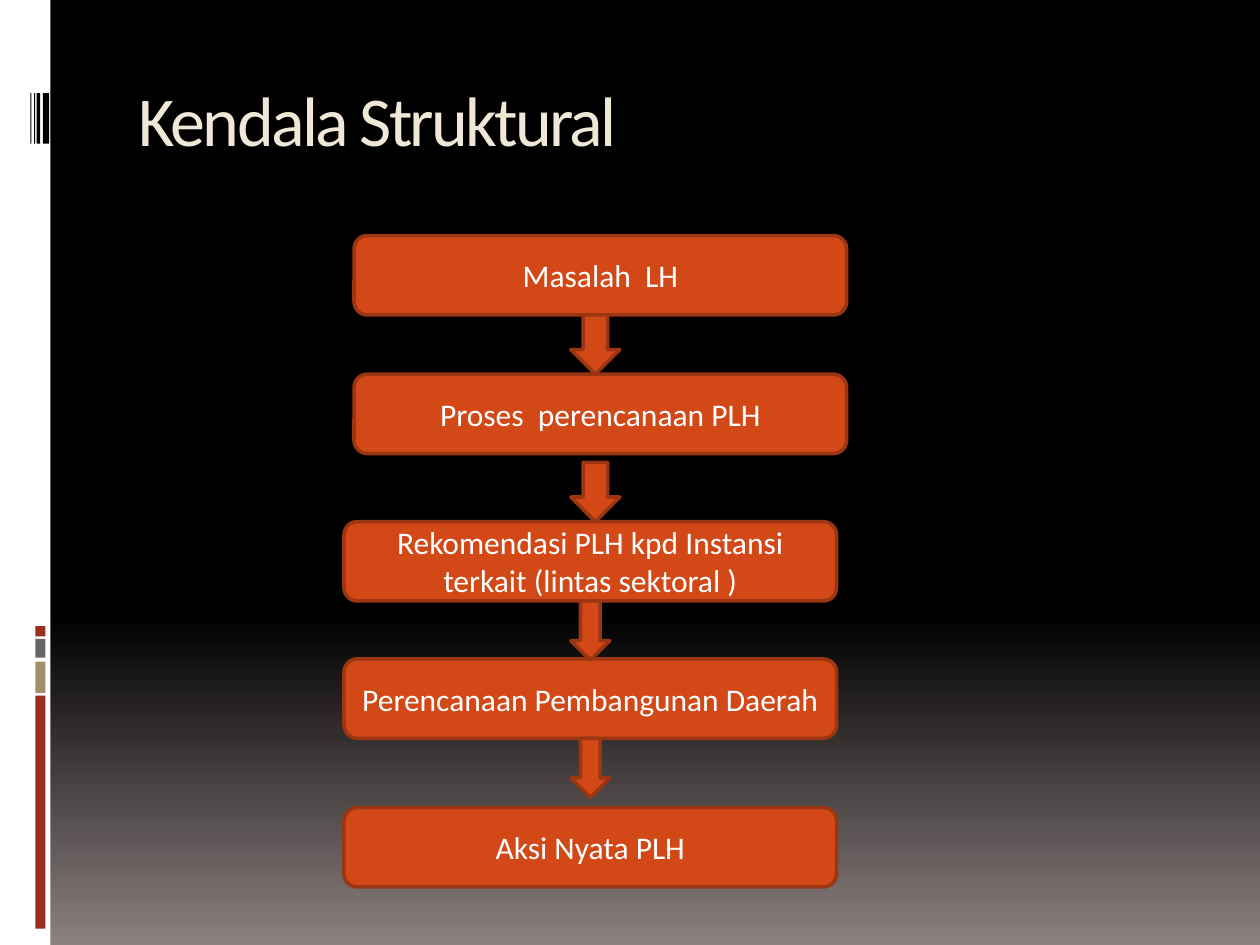
"""Build the Kendala Struktural flow slide."""
from pptx import Presentation
from pptx import util as u
from pptx.dml.color import RGBColor
from pptx.enum import shapes, text

HUES = {"white": "FFFFFF", "black": "000000", "smoke": "8C8080",
        "red": "9B2D1F", "tan": "A28E6A", "grey": "696464",
        "cream": "EFE8D6", "fill": "D34817", "edge": "9C3511"}
KIND = shapes.MSO_SHAPE


def tint(name):
    return RGBColor.from_string(HUES[name])


def draw(kind, box, fill, edge=None):
    shape = slide.shapes.add_shape(kind, *map(u.Inches, box))
    shape.shadow.inherit = False
    shape.fill.solid()
    shape.fill.fore_color.rgb = tint(fill)
    if edge:
        shape.line.color.rgb = tint(edge)
        shape.line.width = u.Pt(2)
    else:
        shape.line.fill.background()
    return shape


deck = Presentation()
deck.slide_width, deck.slide_height = u.Inches(10), u.Inches(7.5)
slide = deck.slides.add_slide(deck.slide_layouts[6])

back = slide.background.fill
back.gradient()
back.gradient_angle = 270
for stop, (spot, hue) in zip(back.gradient_stops, [(0.65, "black"), (1, "smoke")]):
    stop.position = spot
    stop.color.rgb = tint(hue)

draw(KIND.RECTANGLE, (0, 0, 0.4, 7.5), "white")
for top, high, hue in [(5.52, 1.85, "red"), (5.25, 0.25, "tan"),
                       (5.07, 0.15, "grey"), (4.97, 0.08, "red")]:
    draw(KIND.RECTANGLE, (0.28, top, 0.08, high), hue)
for left, wide in [(0.34, 0.05), (0.29, 0.03), (0.27, 0.01), (0.24, 0.01)]:
    draw(KIND.RECTANGLE, (left, 0.74, wide, 0.4), "black")

title = slide.shapes.add_textbox(*map(u.Inches, (1, 0.56, 8.5, 1))).text_frame
title.word_wrap = True
para = title.paragraphs[0]
run = para.add_run()
run.text = "Kendala Struktural"
run.font.size, run.font.name = u.Pt(40), "Calibri"
run.font.color.rgb = tint("cream")
run.font._element.set("spc", "-150")

steps = [(2.81, 1.87, "Masalah  LH"),
         (2.81, 2.97, "Proses  perencanaan PLH"),
         (2.73, 4.14, "Rekomendasi PLH kpd Instansi terkait (lintas sektoral )"),
         (2.73, 5.23, "Perencanaan Pembangunan Daerah"),
         (2.73, 6.41, "Aksi Nyata PLH")]
for left, top, label in steps:
    frame = draw(KIND.ROUNDED_RECTANGLE, (left, top, 3.91, 0.63), "fill", "edge").text_frame
    frame.word_wrap = True
    frame.vertical_anchor = text.MSO_ANCHOR.MIDDLE
    para = frame.paragraphs[0]
    para.text = label
    para.alignment = text.PP_ALIGN.CENTER
    para.font.size, para.font.name = u.Pt(18), "Calibri"
    para.font.color.rgb = tint("white")

for top, wide in [(2.5, 0.39), (3.67, 0.39), (4.77, 0.31), (5.86, 0.31)]:
    draw(KIND.DOWN_ARROW, (4.53, top, wide, 0.47), "fill", "edge")

deck.save("out.pptx")
